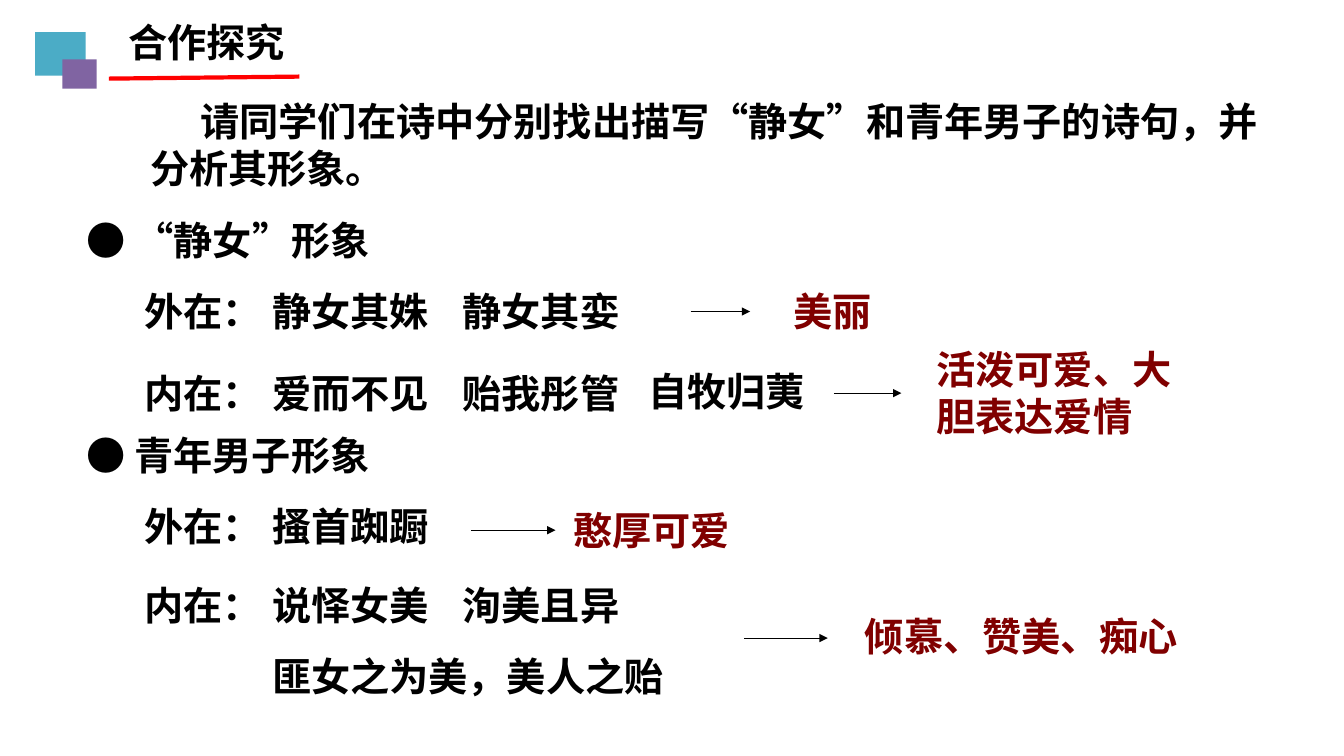
import pptx
import pptx.dml.color
import pptx.enum.lang
import pptx.enum.shapes
import pptx.enum.text
import pptx.oxml
import pptx.oxml.ns
import pptx.util
from pptx.util import Inches

HEADING_FONT = "Noto Sans CJK SC"
VERSE_FONT = "Noto Sans CJK JP"
BLACK, DARK_RED, RED = "000000", "800000", "FF0000"
TEAL, PURPLE = "4BACC6", "8064A2"

LINE_HEIGHT = 0.57
LABEL_LEFT, LABEL_WIDTH = 1.33, 1.48
VERSE_LEFTS, VERSE_WIDTH = (2.6, 4.49), 1.9

# Top of each row, its label and its verses
VERSE_ROWS = [
    (2.8, "外在：", ["静女其姝", "静女其娈"]),
    (3.61, "内在：", ["爱而不见", "贻我彤管"]),
    (4.93, "外在：", ["搔首踟蹰"]),
    (5.72, "内在：", ["说怿女美", "洵美且异"]),
]
SUBHEADINGS = [(2.1, 3.08, "● “静女”形象"), (4.23, 3.33, "● 青年男子形象")]
# Left, top, width, height and wording of each conclusion
CONCLUSIONS = [
    (7.77, 2.8, 1.25, LINE_HEIGHT, "美丽"),
    (9.19, 3.38, 2.64, 1.04, "活泼可爱、大胆表达爱情"),
    (5.59, 4.97, 2.1, LINE_HEIGHT, "憨厚可爱"),
    (8.48, 6.03, 3.49, LINE_HEIGHT, "倾慕、赞美、痴心"),
]
# Start, end and height of each arrow
ARROWS = [(6.85, 7.44, 3.09), (8.27, 8.94, 3.9), (4.67, 5.51, 5.26), (7.38, 8.21, 6.33)]


def rgb(hex_colour):
    return pptx.dml.color.RGBColor.from_string(hex_colour)


def add_text(slide, left, top, width, text, height=LINE_HEIGHT, font=HEADING_FONT, colour=BLACK):
    """Add a bold one-paragraph text box and return its paragraph."""
    box = slide.shapes.add_textbox(Inches(left), Inches(top), Inches(width), Inches(height))
    frame = box.text_frame
    frame.word_wrap = True
    frame.auto_size = pptx.enum.text.MSO_AUTO_SIZE.SHAPE_TO_FIT_TEXT
    paragraph = frame.paragraphs[0]
    run = paragraph.add_run()
    run.text = text
    run.font.size = pptx.util.Pt(28)
    run.font.bold = True
    run.font.name = font
    run.font.language_id = pptx.enum.lang.MSO_LANGUAGE_ID.SIMPLIFIED_CHINESE
    run.font.color.rgb = rgb(colour)
    east_asian = pptx.oxml.ns.qn("a:ea")
    run.font._element.get_or_add_latin().addnext(
        run.font._element.makeelement(east_asian, {"typeface": font}))
    return paragraph


def add_line(slide, start, end, colour, weight, arrow=False):
    line = slide.shapes.add_connector(
        pptx.enum.shapes.MSO_CONNECTOR.STRAIGHT,
        Inches(start[0]), Inches(start[1]), Inches(end[0]), Inches(end[1]))
    line.line.color.rgb = rgb(colour)
    line.line.width = pptx.util.Pt(weight)
    if arrow:
        outline = line.line._get_or_add_ln()
        outline.append(outline.makeelement(pptx.oxml.ns.qn("a:tailEnd"), {"type": "triangle"}))
    properties = line._element.spPr
    properties.append(properties.makeelement(pptx.oxml.ns.qn("a:effectLst"), {}))


def add_square(group, left, top, width, height, colour):
    square = group.shapes.add_shape(
        pptx.enum.shapes.MSO_SHAPE.RECTANGLE,
        Inches(left), Inches(top), Inches(width), Inches(height))
    square.shadow.inherit = False
    square.fill.solid()
    square.fill.fore_color.rgb = rgb(colour)
    square.line.fill.background()


def add_header(slide):
    add_line(slide, (1.08, 0.78), (2.97, 0.76), RED, 3)
    emblem = slide.shapes.add_group_shape()
    add_square(emblem, 0.35, 0.32, 0.5, 0.43, TEAL)
    add_square(emblem, 0.62, 0.59, 0.34, 0.29, PURPLE)
    title = add_text(slide, 1, 0.13, 2.1, "合作探究")
    title.alignment = pptx.enum.text.PP_ALIGN.CENTER


def add_task(slide):
    task = add_text(slide, 1.39, 0.92, 11.38,
                    "请同学们在诗中分别找出描写“静女”和青年男子的诗句，并分析其形象。", height=1.04)
    task._p.get_or_add_pPr().set("indent", str(Inches(0.5)))


def add_verses(slide):
    for top, label, verses in VERSE_ROWS:
        add_text(slide, LABEL_LEFT, top, LABEL_WIDTH, label, font=VERSE_FONT)
        for left, verse in zip(VERSE_LEFTS, verses):
            add_text(slide, left, top, VERSE_WIDTH, verse, font=VERSE_FONT)
    add_text(slide, 6.33, 3.59, VERSE_WIDTH, "自牧归荑", font=VERSE_FONT)
    add_text(slide, VERSE_LEFTS[0], 6.42, 4.31, "匪女之为美，美人之贻", font=VERSE_FONT)


def main():
    presentation = pptx.Presentation()
    presentation.slide_width = Inches(13.33)
    presentation.slide_height = Inches(7.5)
    slide = presentation.slides.add_slide(presentation.slide_layouts[6])

    add_header(slide)
    add_task(slide)
    for top, width, subheading in SUBHEADINGS:
        add_text(slide, 0.76, top, width, subheading)
    add_verses(slide)
    for start, end, height in ARROWS:
        add_line(slide, (start, height), (end, height), BLACK, 0.75, arrow=True)
    for left, top, width, height, conclusion in CONCLUSIONS:
        add_text(slide, left, top, width, conclusion, height, colour=DARK_RED)

    presentation.save("out.pptx")


if __name__ == "__main__":
    main()
